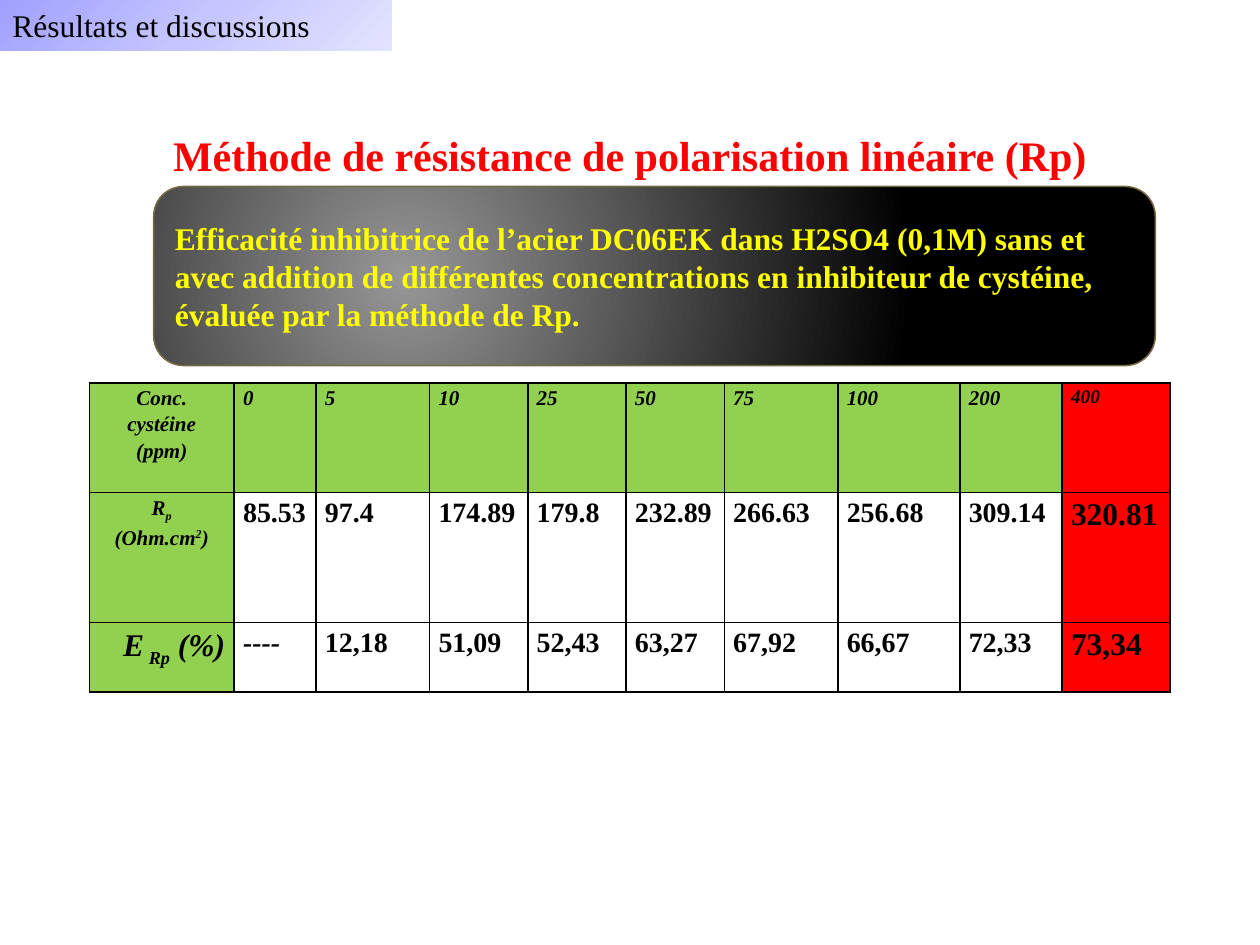
from dataclasses import dataclass

from lxml.etree import SubElement
from pptx import Presentation
from pptx.dml.color import RGBColor
from pptx.enum.shapes import MSO_SHAPE as Shape
from pptx.enum.text import MSO_ANCHOR as Anchor, MSO_AUTO_SIZE as AutoSize, PP_ALIGN as Align
from pptx.oxml import parse_xml
from pptx.oxml.ns import nsdecls, qn
from pptx.util import Cm, Pt

FONT = "Times New Roman"
COLORS = {
    "black": "000000", "red": "FF0000", "yellow": "FFFF00",
    "green": "92D050", "outline": "756944",
    "lilac": "A0A0FF", "lilac mid": "C5C5FF", "lilac light": "E3E3FF",
    "gray": "979797",
}
COLUMN_WIDTHS = [2.92, 1.65, 2.29, 1.98, 1.98, 1.98, 2.29, 2.46, 2.06, 2.18]
ROW_HEIGHTS = [2.21, 2.62, 1.4]


@dataclass
class Piece:
    text: str
    baseline: int = 0


@dataclass
class TableRow:
    label: list
    label_size: int
    label_align: Align
    values: list
    size: int
    last_size: int
    value_fill: str | None = None
    italic: bool = False
    space_after: int = 0


ROWS = [
    TableRow([[Piece("Conc.")], [Piece("cystéine")], [Piece("(ppm)")]], 12, Align.CENTER,
             ["0", "5", "10", "25", "50", "75", "100", "200", "400"],
             12, 11, value_fill="green", italic=True),
    TableRow([[Piece("R"), Piece("p", -25)],
              [Piece("(Ohm.cm"), Piece("2", 30), Piece(")")]], 12, Align.CENTER,
             ["85.53", "97.4", "174.89", "179.8", "232.89", "266.63", "256.68",
              "309.14", "320.81"], 16, 18),
    TableRow([[Piece("E"), Piece(" Rp", -25), Piece(" (%)")]], 18, Align.RIGHT,
             ["----", "12,18", "51,09", "52,43", "63,27", "67,92", "66,67",
              "72,33", "73,34"], 16, 18, space_after=10),
]


def rgb(name: str) -> RGBColor:
    return RGBColor.from_string(COLORS[name])


def write(paragraph, text: str, *, size: float, color: str = "black", bold: bool = True,
          italic: bool = False, align: Align = Align.LEFT, baseline: int = 0) -> None:
    paragraph.alignment = align
    run = paragraph.add_run()
    run.text = text
    font = run.font
    font.name, font.size, font.bold, font.italic = FONT, Pt(size), bold, italic
    font.color.rgb = rgb(color)
    if baseline:
        run._r.get_or_add_rPr().set("baseline", str(baseline * 1000))


def fill_gradient(shape, stops: list, direction: str) -> None:
    shape.fill.gradient()
    gradient = shape._element.spPr.find(qn("a:gradFill"))
    stop_xml = "".join(
        f'<a:gs pos="{position * 1000}"><a:srgbClr val="{COLORS[color]}"/></a:gs>'
        for position, color in stops)
    gradient.getparent().replace(gradient, parse_xml(
        f'<a:gradFill {nsdecls("a")} rotWithShape="1"><a:gsLst>{stop_xml}</a:gsLst>'
        f'{direction}</a:gradFill>'))


def add_panel(slide, kind: Shape, left: float, top: float, width: float, height: float):
    shape = slide.shapes.add_shape(kind, Cm(left), Cm(top), Cm(width), Cm(height))
    shape.shadow.inherit = False
    shape.line.fill.background()
    shape.text_frame.word_wrap = True
    shape.text_frame.vertical_anchor = Anchor.MIDDLE
    return shape


def format_cell(cell, fill: str | None) -> None:
    cell.margin_left = cell.margin_right = Cm(0.18)
    cell.margin_top = cell.margin_bottom = 0
    if fill:
        cell.fill.solid()
        cell.fill.fore_color.rgb = rgb(fill)
    else:
        cell.fill.background()
    properties = cell._tc.get_or_add_tcPr()
    for index, side in enumerate(("lnL", "lnR", "lnT", "lnB")):
        border = SubElement(properties, qn(f"a:{side}"), w=str(Pt(1)))
        solid = SubElement(border, qn("a:solidFill"))
        SubElement(solid, qn("a:srgbClr"), val=COLORS["black"])
        properties.insert(index, border)


def write_cell(cell, lines: list, space_after: int = 0, **style) -> None:
    frame = cell.text_frame
    for index, pieces in enumerate(lines):
        paragraph = frame.add_paragraph() if index else frame.paragraphs[0]
        paragraph.line_spacing = 1.15
        paragraph.space_after = Pt(space_after)
        for piece in pieces:
            write(paragraph, piece.text, baseline=piece.baseline, **style)


def add_results_table(slide) -> None:
    table = slide.shapes.add_table(
        len(ROWS), len(COLUMN_WIDTHS), Cm(1.8), Cm(7.72),
        Cm(sum(COLUMN_WIDTHS)), Cm(sum(ROW_HEIGHTS))).table
    table.first_row = table.horz_banding = False
    for column, width in zip(table.columns, COLUMN_WIDTHS):
        column.width = Cm(width)
    for table_row, height, row in zip(table.rows, ROW_HEIGHTS, ROWS):
        table_row.height = Cm(height)
        label, *cells = table_row.cells
        format_cell(label, "green")
        write_cell(label, row.label, size=row.label_size, italic=True, align=row.label_align)
        for index, (cell, value) in enumerate(zip(cells, row.values)):
            last = index == len(row.values) - 1
            format_cell(cell, "red" if last else row.value_fill)
            write_cell(cell, [[Piece(value)]], row.space_after,
                       size=row.last_size if last else row.size,
                       italic=row.italic or value == "----")


def main() -> None:
    presentation = Presentation()
    presentation.slide_width, presentation.slide_height = Cm(25.4), Cm(19.05)
    slide = presentation.slides.add_slide(presentation.slide_layouts[5])

    title = slide.shapes.title
    title.left, title.top, title.width, title.height = Cm(3.1), Cm(2.49), Cm(19.2), Cm(1.27)
    title.text_frame.auto_size = AutoSize.NONE
    title.text_frame.word_wrap = True
    write(title.text_frame.paragraphs[0], "Méthode de résistance de polarisation linéaire (Rp)",
          size=24, color="red", align=Align.CENTER)

    section = add_panel(slide, Shape.RECTANGLE, 0, 0, 7.9, 1.02)
    fill_gradient(section, [(0, "lilac"), (50, "lilac mid"), (100, "lilac light")],
                  '<a:lin ang="2700000" scaled="1"/>')
    write(section.text_frame.paragraphs[0], "Résultats et discussions", size=18, bold=False)

    add_results_table(slide)

    caption = add_panel(slide, Shape.ROUNDED_RECTANGLE, 3.1, 3.76, 20.19, 3.61)
    fill_gradient(caption, [(0, "gray"), (100, "black")],
                  '<a:path path="circle"><a:fillToRect l="50000" t="100000" '
                  'r="100000" b="100000"/></a:path>')
    caption.line.color.rgb = rgb("outline")
    caption.line.width = Pt(0.85)
    write(caption.text_frame.paragraphs[0],
          "Efficacité inhibitrice de l’acier DC06EK dans H2SO4 (0,1M) sans et avec addition de "
          "différentes concentrations en inhibiteur de cystéine, évaluée par la méthode de Rp.",
          size=18, color="yellow")

    presentation.save("out.pptx")


if __name__ == "__main__":
    main()
